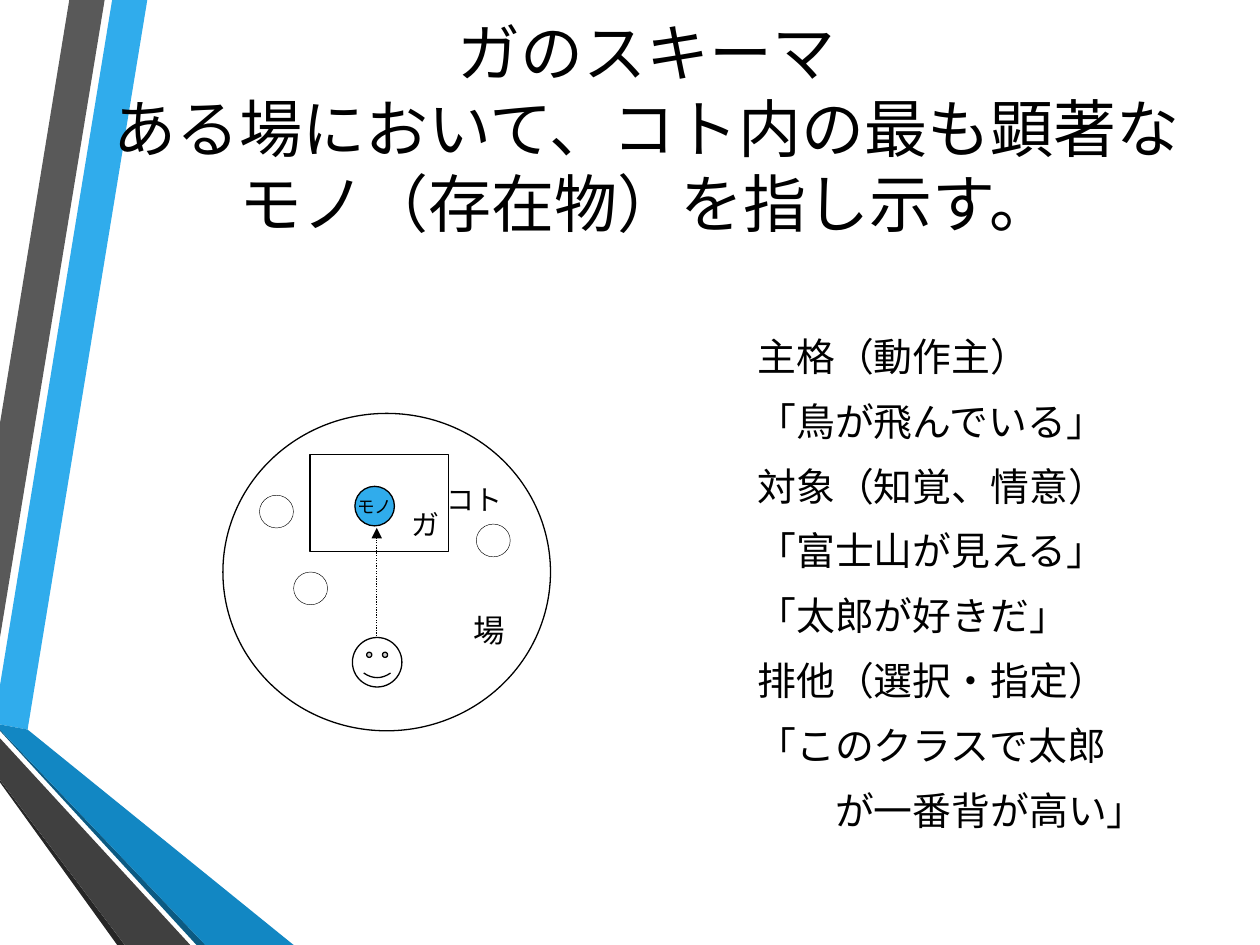
from lxml import etree
from pptx import Presentation
from pptx.dml.color import RGBColor
from pptx.enum.dml import MSO_LINE
from pptx.enum.shapes import MSO_CONNECTOR, MSO_SHAPE
from pptx.enum.text import MSO_ANCHOR, MSO_AUTO_SIZE, PP_ALIGN
from pptx.oxml.ns import qn
from pptx.util import Pt

OVAL, RECTANGLE, SMILEY = MSO_SHAPE.OVAL, MSO_SHAPE.RECTANGLE, MSO_SHAPE.SMILEY_FACE
STRAIGHT, DOTTED = MSO_CONNECTOR.STRAIGHT, MSO_LINE.ROUND_DOT
LEFT, CENTER, RIGHT = PP_ALIGN.LEFT, PP_ALIGN.CENTER, PP_ALIGN.RIGHT
MIDDLE, BOTTOM = MSO_ANCHOR.MIDDLE, MSO_ANCHOR.BOTTOM
NO_AUTOFIT = MSO_AUTO_SIZE.NONE
BLACK, WHITE, BLUE = "000000", "FFFFFF", "30ACEC"
color = RGBColor.from_string


def style_text(shape, size, font, alignment, anchor=MIDDLE):
    frame = shape.text_frame
    frame.auto_size = NO_AUTOFIT
    frame.vertical_anchor = anchor
    for paragraph in frame.paragraphs:
        paragraph.alignment = alignment
        for run in paragraph.runs:
            run.font.size = Pt(size)
            run.font.name = font
            run.font.color.rgb = color(BLACK)
            east_asian = etree.SubElement(run.font._element, qn("a:ea"))
            east_asian.set("typeface", font)


def add_figure(kind, left, top, width, height, line_width=0, fill=WHITE, text="", size=16):
    """Add a filled shape, outlined in black if it has a line width."""
    shape = slide.shapes.add_shape(kind, Pt(left), Pt(top), Pt(width), Pt(height))
    shape.shadow.inherit = False
    shape.fill.solid()
    shape.fill.fore_color.rgb = color(fill)
    if line_width:
        shape.line.color.rgb = color(BLACK)
        shape.line.width = Pt(line_width)
    else:
        shape.line.fill.background()
    if text:
        shape.text_frame.text = text
        shape.text_frame.word_wrap = False
        style_text(shape, size, "Arial", CENTER)
    return shape


presentation = Presentation()
presentation.slide_width, presentation.slide_height = Pt(720), Pt(540)
slide = presentation.slides.add_slide(presentation.slide_layouts[1])
title, body = slide.placeholders

# Folded ribbons along the left edge
ribbons = [
    (BLUE, [(0, 391.7), (0, 414), (15.8, 416.9), (84.2, 0), (64.1, 0)]),
    ("595959", [(59.8, 0), (39.6, 0), (0, 241.9), (0, 364.3)]),
    ("262626", [(0, 445.7), (0, 447.1), (67, 540), (71.3, 540)]),
    ("0C5A82", [(0, 416.9), (0, 417.6), (112.3, 540), (117.4, 540)]),
    ("1287C3", [(0, 416.9), (117.4, 540), (167.8, 540), (15.8, 416.9), (0, 414)]),
    ("404040", [(0, 445.7), (71.3, 540), (108.7, 540), (0, 421.9)]),
]
for fill, corners in ribbons:
    points = [(Pt(x), Pt(y)) for x, y in corners]
    builder = slide.shapes.build_freeform(*points[0])
    builder.add_line_segments(points[1:], close=True)
    ribbon = builder.convert_to_shape()
    ribbon.shadow.inherit = False
    ribbon.fill.solid()
    ribbon.fill.fore_color.rgb = color(fill)
    ribbon.line.fill.background()

# Title and examples lie in front of the ribbons
for placeholder, top, height in [(title, 18, 150.5), (body, 185.8, 294.5)]:
    slide.shapes._spTree.append(placeholder._element)
    placeholder.left, placeholder.top = Pt(48.2), Pt(top)
    placeholder.width, placeholder.height = Pt(642.2), Pt(height)

title.text_frame.text = "ガのスキーマ\vある場において、コト内の最も顕著なモノ（存在物）を指し示す。"
title.text_frame.margin_bottom = Pt(45)
style_text(title, 36, "Calibri", CENTER)

EXAMPLE_INDENT = 377.4
CONTINUATION_INDENT = EXAMPLE_INDENT + 2 * 22.2
examples = [
    "主格（動作主）",
    "「鳥が飛んでいる」",
    "対象（知覚、情意）",
    "「富士山が見える」",
    "「太郎が好きだ」",
    "排他（選択・指定）",
    "「このクラスで太郎",
    "が一番背が高い」",
]
body.text_frame.text = "\n".join(examples)
style_text(body, 22.2, "Calibri", LEFT)
for paragraph in body.text_frame.paragraphs:
    paragraph.space_before, paragraph.space_after = Pt(4.4), Pt(6)
    is_continuation = paragraph.text == examples[-1]
    properties = paragraph._p.get_or_add_pPr()
    properties.set("marL", str(Pt(CONTINUATION_INDENT if is_continuation else EXAMPLE_INDENT)))
    properties.set("indent", "0")
    etree.SubElement(properties, qn("a:buNone"))

# Schema: the viewer in the field points at the thing inside the event
add_figure(OVAL, 127.4, 236.2, 187.2, 181.4, 0.75)
add_figure(SMILEY, 201.4, 364.3, 28.3, 28.3, 0.75)
event = add_figure(RECTANGLE, 177.1, 259.9, 79.2, 55.4, 0.75, text="ガ")
event.text_frame.margin_right, event.text_frame.margin_bottom = Pt(5), Pt(6)
event.text_frame.word_wrap = True
style_text(event, 16, "Arial", RIGHT, BOTTOM)
add_figure(OVAL, 202.8, 277.9, 22.6, 22.6, 0.75, BLUE, "モノ", 10)

arrow = slide.shapes.add_connector(STRAIGHT, Pt(215.3), Pt(363.6), Pt(215.3), Pt(301.7))
arrow.line.color.rgb = color(BLACK)
arrow.line.width = Pt(0.75)
arrow.line.dash_style = DOTTED
etree.SubElement(arrow.line._get_or_add_ln(), qn("a:tailEnd")).set("type", "triangle")
etree.SubElement(arrow._element.spPr, qn("a:effectLst"))

add_figure(RECTANGLE, 269.3, 283.7, 3.6, 3.6, text="コト")
add_figure(RECTANGLE, 262.8, 345.6, 33.8, 28.1, text="場", size=18)
for left, top in [(148.3, 283), (167.8, 326.9), (272.2, 299.5)]:
    add_figure(OVAL, left, top, 19.4, 18.7, 0.25)

presentation.save("out.pptx")
